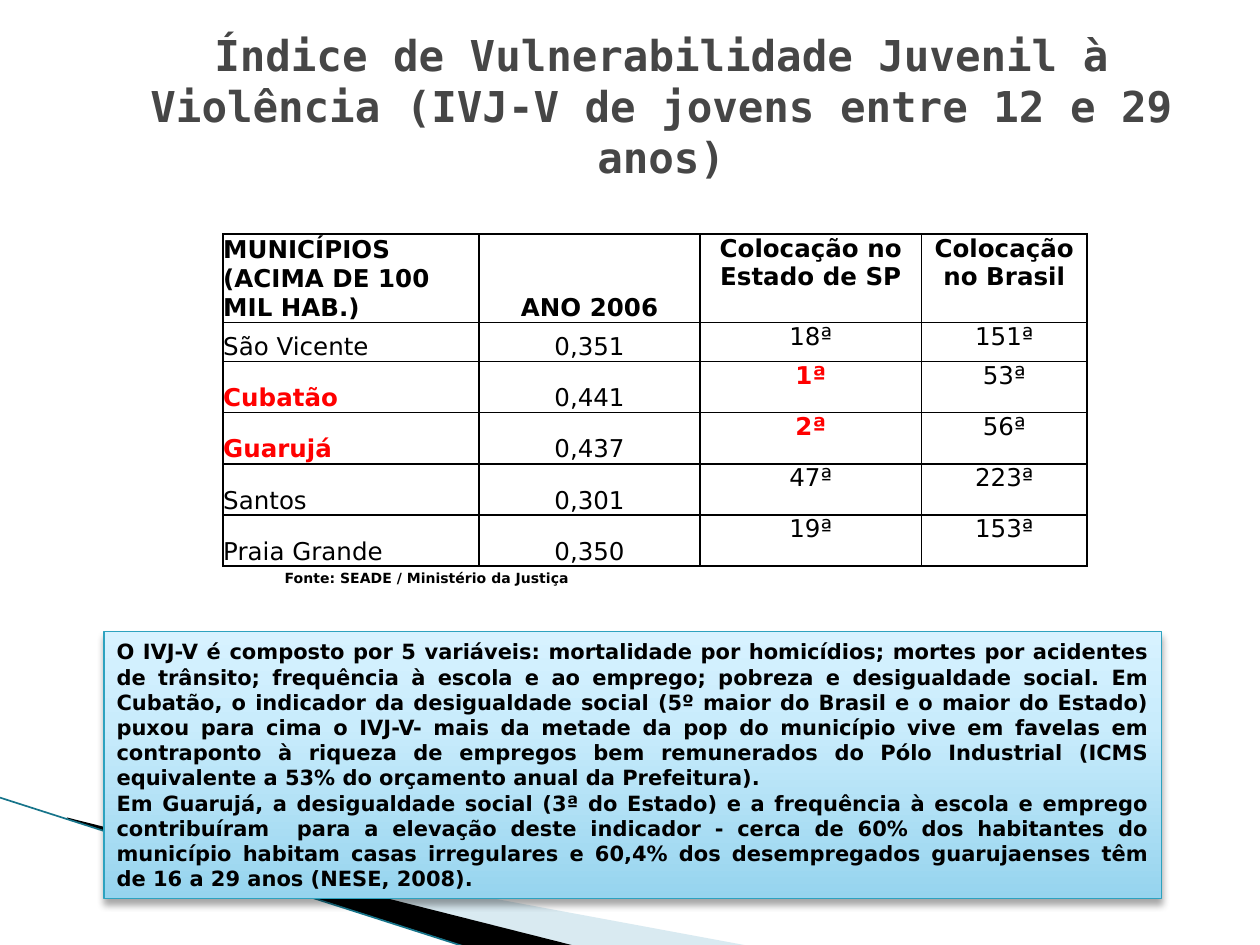
from dataclasses import dataclass

from lxml import etree
from pptx import Presentation
from pptx.dml.color import RGBColor
from pptx.enum.shapes import MSO_CONNECTOR, MSO_SHAPE
from pptx.enum.text import MSO_ANCHOR, PP_ALIGN
from pptx.oxml import parse_xml
from pptx.oxml.ns import nsdecls, qn
from pptx.util import Cm, Pt

LEFT, CENTER, JUSTIFY = PP_ALIGN.LEFT, PP_ALIGN.CENTER, PP_ALIGN.JUSTIFY
TOP, MIDDLE, BOTTOM = MSO_ANCHOR.TOP, MSO_ANCHOR.MIDDLE, MSO_ANCHOR.BOTTOM
RECTANGLE, STRAIGHT = MSO_SHAPE.RECTANGLE, MSO_CONNECTOR.STRAIGHT


@dataclass(frozen=True)
class Theme:
    body_font: str = "DejaVu Sans"
    title_font: str = "DejaVu Sans Mono"
    title_size: float = 24.3
    table_size: float = 14
    note_size: float = 12
    source_size: float = 8
    black: str = "000000"
    title: str = "464646"
    highlight: str = "FF0000"
    pale_wave: str = "A0CBDC"
    wave_line: str = "16748A"
    note_line: str = "2DA2BF"
    note_stops: tuple = ((0, "96D4EE"), (65, "C9ECFC"), (100, "D7F2FF"))


THEME = Theme()

TITLE = "Índice de Vulnerabilidade Juvenil à Violência (IVJ-V de jovens entre 12 e 29 anos)"
SOURCE = "Fonte: SEADE / Ministério da Justiça"
HEADER = ("MUNICÍPIOS (ACIMA DE 100 MIL HAB.)", "ANO 2006",
          "Colocação no Estado de SP", "Colocação no Brasil")
CITIES = (
    ("São Vicente", "0,351", "18ª", "151ª"),
    ("Cubatão", "0,441", "1ª", "53ª"),
    ("Guarujá", "0,437", "2ª", "56ª"),
    ("Santos", "0,301", "47ª", "223ª"),
    ("Praia Grande", "0,350", "19ª", "153ª"),
)
HIGHLIGHTED = {"Cubatão", "1ª", "Guarujá", "2ª"}
NOTES = (
    "O IVJ-V é composto por 5 variáveis: mortalidade por homicídios; mortes por "
    "acidentes de trânsito; frequência à escola e ao emprego; pobreza e desigualdade "
    "social. Em Cubatão, o indicador da desigualdade social (5º maior do Brasil e o "
    "maior do Estado) puxou para cima o IVJ-V- mais da metade da pop do município vive "
    "em favelas em contraponto à riqueza de empregos bem remunerados do Pólo Industrial "
    "(ICMS equivalente a 53% do orçamento anual da Prefeitura).",
    "Em Guarujá, a desigualdade social (3ª do Estado) e a frequência à escola e emprego "
    "contribuíram  para a elevação deste indicador - cerca de 60% dos habitantes do "
    "município habitam casas irregulares e 60,4% dos desempregados guarujaenses têm de "
    "16 a 29 anos (NESE, 2008).",
)


def rgb(color):
    return RGBColor.from_string(color)


def apply_format(target, values):
    for name, value in values.items():
        setattr(target, name, value)


def write(frame, paragraphs, size, align=LEFT, color=THEME.black, bold=True,
          font=THEME.body_font):
    for index, text in enumerate(paragraphs):
        paragraph = frame.add_paragraph() if index else frame.paragraphs[0]
        paragraph.alignment = align
        run = paragraph.add_run()
        run.text = text
        apply_format(run.font, {"name": font, "size": Pt(size), "bold": bold})
        run.font.color.rgb = rgb(color)


def add_text(slide, box, text, size, frame_format, **text_format):
    frame = slide.shapes.add_textbox(*map(Cm, box)).text_frame
    apply_format(frame, {"word_wrap": True, **frame_format})
    write(frame, [text], size, **text_format)


def add_wave(slide, points, color, opacity=100):
    start, *rest = [(Cm(x), Cm(y)) for x, y in points]
    builder = slide.shapes.build_freeform(*start)
    builder.add_line_segments(rest, close=True)
    wave = builder.convert_to_shape()
    wave.shadow.inherit = False
    wave.fill.solid()
    wave.fill.fore_color.rgb = rgb(color)
    wave.line.fill.background()
    if opacity < 100:
        fill_color = wave.fill._xPr.find(f".//{qn('a:srgbClr')}")
        etree.SubElement(fill_color, qn("a:alpha"), val=str(opacity * 1000))


def add_wave_line(slide, start, end):
    edge = slide.shapes.add_connector(STRAIGHT, *map(Cm, start + end))
    edge.line.color.rgb = rgb(THEME.wave_line)
    edge.line.width = Pt(0.95)
    etree.SubElement(edge._element.spPr, qn("a:effectLst"))


def outline_cell(cell):
    properties = cell._tc.get_or_add_tcPr()
    for position, side in enumerate(("lnL", "lnR", "lnT", "lnB")):
        border = parse_xml(
            f'<a:{side} {nsdecls("a")} w="{Pt(1)}"><a:solidFill>'
            f'<a:srgbClr val="{THEME.black}"/></a:solidFill></a:{side}>')
        properties.insert(position, border)


def add_ranking(slide):
    widths = (5.16, 4.45, 4.47, 3.33)
    heights = (1.63, 0.79) + (1.03,) * 4
    table = slide.shapes.add_table(
        len(heights), len(widths), Cm(4.5), Cm(4.72),
        Cm(sum(widths)), Cm(sum(heights))).table
    apply_format(table, {"first_row": False, "horz_banding": False})
    for column, width in zip(table.columns, widths):
        column.width = Cm(width)
    for row, height in zip(table.rows, heights):
        row.height = Cm(height)

    no_margins = dict.fromkeys(
        ("margin_left", "margin_right", "margin_top", "margin_bottom"), 0)
    for r, values in enumerate((HEADER,) + CITIES):
        for c, value in enumerate(values):
            cell = table.cell(r, c)
            marked = value in HIGHLIGHTED
            apply_format(cell, {**no_margins,
                                "vertical_anchor": BOTTOM if c < 2 else TOP})
            cell.fill.background()
            outline_cell(cell)
            write(cell.text_frame, [value], THEME.table_size,
                  align=CENTER if c else LEFT, bold=r == 0 or marked,
                  color=THEME.highlight if marked else THEME.black)


def add_note(slide, box):
    note = slide.shapes.add_shape(RECTANGLE, *map(Cm, box))
    note.line.color.rgb = rgb(THEME.note_line)
    note.line.width = Pt(0.75)
    # Three-stop gradient running upwards, and a soft shadow below
    stops = "".join(f'<a:gs pos="{place * 1000}"><a:srgbClr val="{color}"/></a:gs>'
                    for place, color in THEME.note_stops)
    outline = note._element.spPr.find(qn("a:ln"))
    outline.addprevious(parse_xml(
        f'<a:gradFill {nsdecls("a")} rotWithShape="1"><a:gsLst>{stops}</a:gsLst>'
        '<a:lin ang="16200000" scaled="0"/></a:gradFill>'))
    outline.addnext(parse_xml(
        f'<a:effectLst {nsdecls("a")}><a:outerShdw blurRad="{Pt(4)}" dist="{Pt(3)}" '
        f'dir="5400000" rotWithShape="0"><a:srgbClr val="{THEME.black}">'
        '<a:alpha val="35000"/></a:srgbClr></a:outerShdw></a:effectLst>'))
    apply_format(note.text_frame, {"word_wrap": True, "vertical_anchor": MIDDLE})
    write(note.text_frame, NOTES, THEME.note_size, align=JUSTIFY)


def main():
    deck = Presentation()
    apply_format(deck, {"slide_width": Cm(25.4), "slide_height": Cm(19.05)})
    slide = deck.slides.add_slide(deck.slide_layouts[6])

    # Background waves
    add_wave(slide, [(1.4, 16.53), (15.11, 19.07), (11.58, 19.07), (1.4, 16.51)],
             THEME.pale_wave, opacity=40)
    add_wave(slide, [(1.35, 16.48), (11.6, 19.07), (9.45, 19.1), (1.37, 16.51)],
             THEME.black)
    add_wave_line(slide, (0, 16.08), (9.42, 19.1))

    # Title
    add_text(slide, (1.9, 1.32, 22.86, 3.18), TITLE, THEME.title_size,
             {"vertical_anchor": MIDDLE, "margin_top": 0, "margin_bottom": Cm(1.58)},
             align=CENTER, color=THEME.title, font=THEME.title_font)

    # Ranking and its source
    add_ranking(slide)
    add_text(slide, (4.5, 11.33, 17.4, 1.27), SOURCE, THEME.source_size,
             {"vertical_anchor": TOP, "margin_top": Cm(0.16), "margin_left": Cm(1.24)})

    # Explanation
    add_note(slide, (2.1, 12.73, 21.32, 5.38))

    deck.save("out.pptx")


if __name__ == "__main__":
    main()
